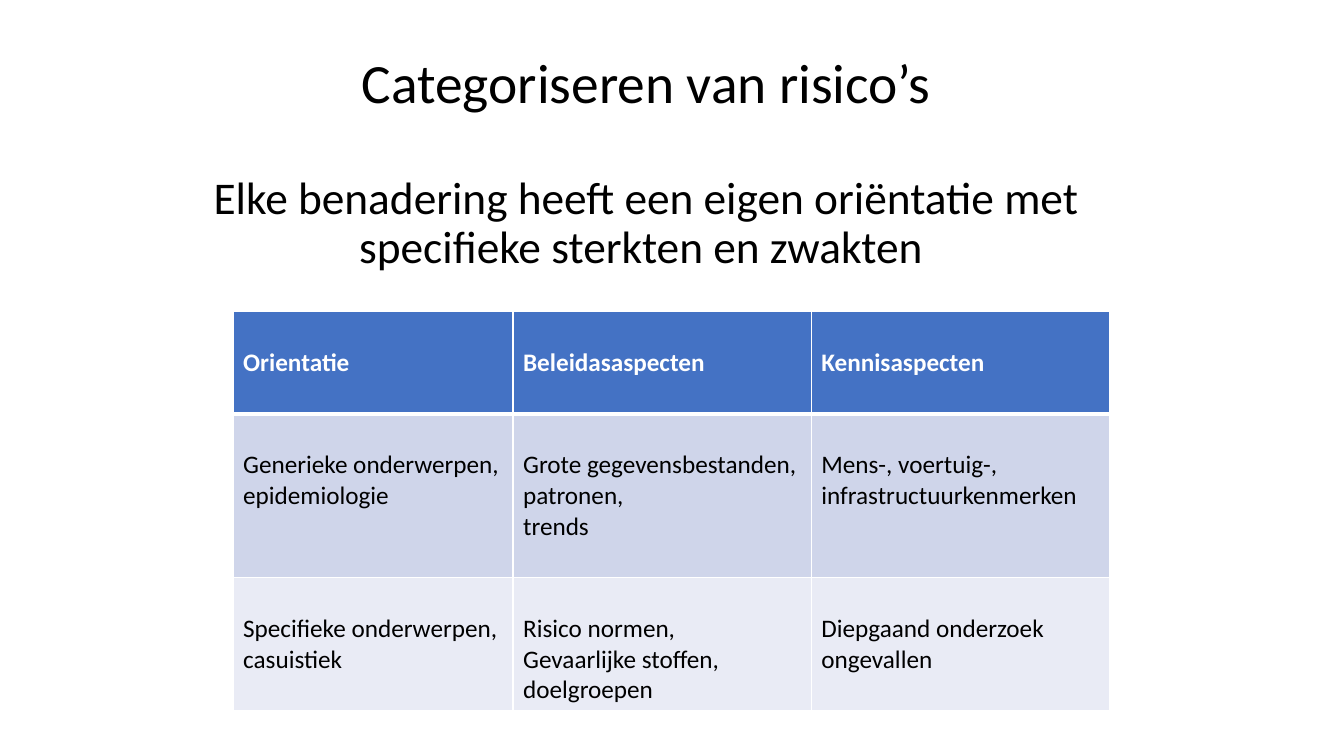
from lxml import etree
from pptx import Presentation
from pptx.dml.color import RGBColor
from pptx.enum.text import MSO_ANCHOR, PP_ALIGN
from pptx.oxml.ns import qn
from pptx.util import Pt

CENTER = PP_ALIGN.CENTER
BOTTOM = MSO_ANCHOR.BOTTOM

THEME = {
    "font": "Calibri",
    "dark": "000000",
    "light": "FFFFFF",
    "fills": ["4472C4", "CFD5EA", "E9EBF5"],
    "title": 39.6,
    "subtitle": 32.4,
    "cell": 18,
}

HEADING = [
    ("Categoriseren van risico’s", THEME["title"], 0),
    ("Elke benadering heeft een eigen oriëntatie met\vspecifieke sterkten en zwakten ",
     THEME["subtitle"], 43),
]
ROWS = [
    ["Orientatie", "Beleidasaspecten", "Kennisaspecten"],
    ["Generieke onderwerpen,\nepidemiologie",
     "Grote gegevensbestanden,\npatronen,\ntrends",
     "Mens-, voertuig-, infrastructuurkenmerken"],
    ["Specifieke onderwerpen,\ncasuistiek",
     "Risico normen,\nGevaarlijke stoffen,\ndoelgroepen",
     "Diepgaand onderzoek ongevallen"],
]
COL_WIDTHS = [200, 213, 213]
ROW_HEIGHTS = [73, 117, 95]


def style_runs(p, size, color, bold=False):
    values = {"name": THEME["font"], "size": Pt(size), "bold": bold}
    for r in p.runs:
        for name, value in values.items():
            setattr(r.font, name, value)
        r.font.color.rgb = RGBColor.from_string(color)


def add_borders(cell, widths):
    tc_pr = cell._tc.get_or_add_tcPr()
    for i, (side, width) in enumerate(widths.items()):
        ln = etree.Element(qn(f"a:ln{side}"), w=str(Pt(width)))
        fill = etree.SubElement(ln, qn("a:solidFill"))
        etree.SubElement(fill, qn("a:srgbClr"), val=THEME["light"])
        tc_pr.insert(i, ln)


prs = Presentation()
prs.slide_width, prs.slide_height = Pt(960), Pt(540)
s = prs.slides.add_slide(prs.slide_layouts[6])

tf = s.shapes.add_textbox(Pt(47.5), Pt(139.7), Pt(828), Pt(59)).text_frame
tf.word_wrap = True
tf.vertical_anchor = BOTTOM
for i, (text, size, gap) in enumerate(HEADING):
    p = tf.add_paragraph() if i else tf.paragraphs[0]
    p.text = text
    for name, value in {"alignment": CENTER, "line_spacing": 0.9, "space_before": Pt(gap)}.items():
        setattr(p, name, value)
    style_runs(p, size, THEME["dark"])

table = s.shapes.add_table(len(ROWS), len(COL_WIDTHS), Pt(166.5), Pt(222.5),
                           Pt(sum(COL_WIDTHS)), Pt(sum(ROW_HEIGHTS))).table
for col, width in zip(table.columns, COL_WIDTHS):
    col.width = Pt(width)
for i, (texts, height) in enumerate(zip(ROWS, ROW_HEIGHTS)):
    table.rows[i].height = Pt(height)
    header = i == 0
    for j, text in enumerate(texts):
        cell = table.cell(i, j)
        cell.margin_top = Pt(25.6)
        cell.text = text
        for p in cell.text_frame.paragraphs:
            style_runs(p, THEME["cell"], THEME["light" if header else "dark"], header)
        cell.fill.solid()
        cell.fill.fore_color.rgb = RGBColor.from_string(THEME["fills"][i])
        add_borders(cell, {"L": 1, "R": 1, "T": 3 if i == 1 else 1, "B": 3 if header else 1})

prs.save("out.pptx")
